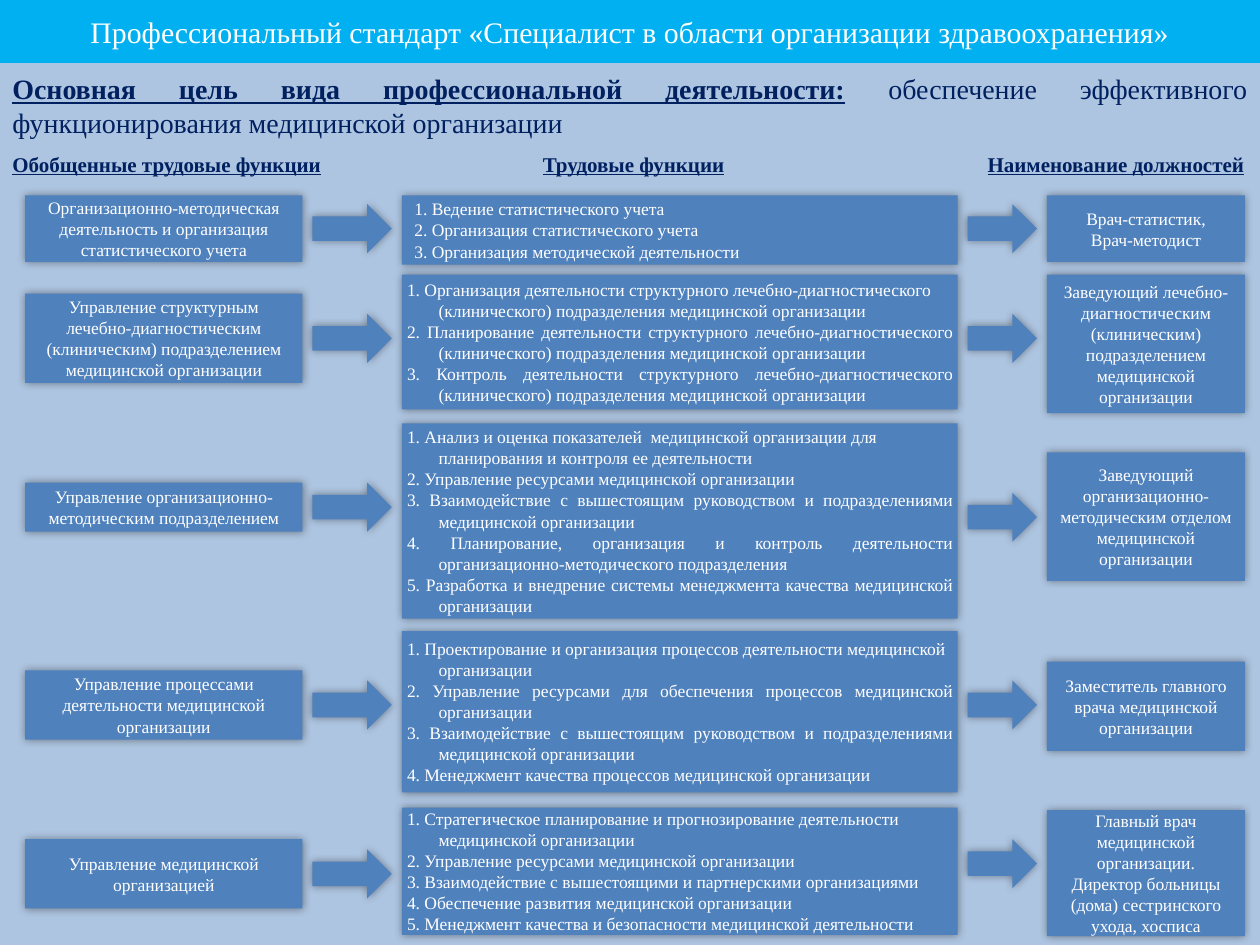
from dataclasses import dataclass

from lxml import etree
from pptx import Presentation
from pptx.dml.color import RGBColor
from pptx.enum.shapes import MSO_SHAPE as Shape
from pptx.enum.text import MSO_ANCHOR as Anchor, MSO_AUTO_SIZE as AutoSize, PP_ALIGN as Align
from pptx.oxml.ns import qn
from pptx.util import Inches, Pt

FONT = "Times New Roman"
BLUE = RGBColor(0x4F, 0x81, 0xBD)
PALE_BLUE = RGBColor(0xAE, 0xC5, 0xE1)
SKY = RGBColor(0x00, 0xB0, 0xF0)
NAVY = RGBColor(0x00, 0x20, 0x60)
WHITE = RGBColor(0xFF, 0xFF, 0xFF)

# Columns: left edge and width
GENERAL, FIRST_ARROW, DUTIES, SECOND_ARROW, POSITION = (
    (0.2, 2.2), (2.48, 0.63), (3.19, 4.41), (7.68, 0.55), (8.31, 1.57))
ARROW_HEIGHT = 0.39


@dataclass
class Row:
    """Each span is the top and height of a card; arrows give their tops."""
    general: str
    general_span: tuple
    duties: list
    duties_span: tuple
    positions: list
    position_span: tuple
    arrow_tops: tuple
    justified: bool = True


ROWS = [
    Row("Организационно-методическая деятельность и организация статистического учета",
        (1.55, 0.53),
        ["Ведение статистического учета",
         "Организация статистического учета",
         "Организация методической деятельности"],
        (1.55, 0.55),
        ["Врач-статистик,", "Врач-методист"], (1.55, 0.53),
        (1.62, 1.62), justified=False),
    Row("Управление структурным лечебно-диагностическим (клиническим) подразделением "
        "медицинской организации",
        (2.33, 0.71),
        [f"{action} деятельности структурного лечебно-диагностического (клинического) "
         "подразделения медицинской организации"
         for action in ("Организация", "Планирование", "Контроль")],
        (2.18, 1.07),
        ["Заведующий лечебно-диагностическим (клиническим) подразделением "
         "медицинской организации"], (2.18, 1.1),
        (2.49, 2.49)),
    Row("Управление организационно-методическим подразделением",
        (3.83, 0.39),
        ["Анализ и оценка показателей  медицинской организации для планирования "
         "и контроля ее деятельности",
         "Управление ресурсами медицинской организации",
         "Взаимодействие с вышестоящим руководством и подразделениями "
         "медицинской организации",
         "Планирование, организация и контроль деятельности "
         "организационно-методического подразделения",
         "Разработка и внедрение системы менеджмента качества медицинской организации"],
        (3.36, 1.55),
        ["Заведующий организационно-методическим отделом медицинской организации"],
        (3.59, 1.02),
        (3.83, 3.91)),
    Row("Управление процессами деятельности медицинской организации",
        (5.32, 0.55),
        ["Проектирование и организация процессов деятельности медицинской организации",
         "Управление ресурсами для обеспечения процессов медицинской организации",
         "Взаимодействие с вышестоящим руководством и подразделениями "
         "медицинской организации",
         "Менеджмент качества процессов медицинской организации"],
        (5.01, 1.28),
        ["Заместитель главного врача медицинской организации"], (5.25, 0.71),
        (5.4, 5.4)),
    Row("Управление медицинской организацией",
        (6.66, 0.55),
        ["Стратегическое планирование и прогнозирование деятельности "
         "медицинской организации",
         "Управление ресурсами медицинской организации",
         "Взаимодействие с вышестоящими и партнерскими организациями",
         "Обеспечение развития медицинской организации",
         "Менеджмент качества и безопасности медицинской деятельности"],
        (6.41, 1.01),
        ["Главный врач медицинской организации.",
         "Директор больницы (дома) сестринского ухода, хосписа"], (6.43, 1),
        (6.74, 6.66)),
]

HEADINGS = [
    ("Обобщенные трудовые функции", 0, 2.68),
    ("Трудовые функции", 4.21, 1.66),
    ("Наименование должностей", 7.74, 2.26),
]


def set_font(font, size, color, strong=False):
    font.name, font.size = FONT, Pt(size)
    font.color.rgb = color
    font.bold = font.underline = strong


def add_soft_shadow(shape):
    shape.shadow.inherit = False
    effects = shape._element.spPr.find(qn("a:effectLst"))
    shadow = etree.SubElement(effects, qn("a:outerShdw"), blurRad=str(Pt(5)),
                              dist="0", dir="0", algn="ctr", rotWithShape="0")
    color = etree.SubElement(shadow, qn("a:srgbClr"), val="000000")
    etree.SubElement(color, qn("a:alpha"), val="40000")


def add_block(slide, kind, column, span):
    (left, width), (top, height) = column, span
    shape = slide.shapes.add_shape(
        kind, Inches(left), Inches(top), Inches(width), Inches(height))
    shape.fill.solid()
    shape.fill.fore_color.rgb = BLUE
    shape.line.fill.background()
    add_soft_shadow(shape)
    return shape


def add_card(slide, column, span, lines):
    """Blue card with centred lines."""
    frame = add_block(slide, Shape.RECTANGLE, column, span).text_frame
    frame.word_wrap = True
    frame.vertical_anchor = Anchor.MIDDLE
    frame.text = "\n".join(lines)
    for paragraph in frame.paragraphs:
        paragraph.alignment = Align.CENTER
        set_font(paragraph.font, 10, WHITE)
    return frame


def add_duties(slide, row):
    """Numbered list with a hanging indent."""
    lines = [f"{number}. {duty}" for number, duty in enumerate(row.duties, 1)]
    frame = add_card(slide, DUTIES, row.duties_span, lines)
    if row.justified:
        frame.margin_left = frame.margin_right = Inches(0.04)
        frame.margin_top = frame.margin_bottom = Inches(0.04)
    for index, paragraph in enumerate(frame.paragraphs):
        paragraph.alignment = Align.JUSTIFY if row.justified and index else Align.LEFT
        properties = paragraph._p.get_or_add_pPr()
        properties.set("marL", str(Inches(0.25)))
        properties.set("indent", str(Inches(-0.25)))


def add_row(slide, row):
    add_card(slide, GENERAL, row.general_span, [row.general])
    add_duties(slide, row)
    add_card(slide, POSITION, row.position_span, row.positions)
    for column, top in zip((FIRST_ARROW, SECOND_ARROW), row.arrow_tops):
        add_block(slide, Shape.RIGHT_ARROW, column, (top, ARROW_HEIGHT))


def add_title(slide, left, top, width, height):
    title = slide.shapes.title
    title.left, title.top = Inches(left), Inches(top)
    title.width, title.height = Inches(width), Inches(height)
    title.fill.solid()
    title.fill.fore_color.rgb = SKY
    frame = title.text_frame
    frame.text = "Профессиональный стандарт «Специалист в области организации здравоохранения»"
    frame.auto_size = AutoSize.NONE
    frame.vertical_anchor = Anchor.MIDDLE
    frame.paragraphs[0].alignment = Align.CENTER
    set_font(frame.paragraphs[0].font, 17, WHITE)


def add_text_frame(slide, left, top, width, height, wrap):
    box = slide.shapes.add_textbox(Inches(left), Inches(top), Inches(width), Inches(height))
    box.text_frame.word_wrap = wrap
    return box.text_frame


def add_goal(slide, left, top, width, height):
    paragraph = add_text_frame(slide, left, top, width, height, True).paragraphs[0]
    paragraph.alignment = Align.JUSTIFY
    for text, strong in (
            ("Основная цель вида профессиональной деятельности:", True),
            (" обеспечение эффективного функционирования медицинской организации", False)):
        run = paragraph.add_run()
        run.text = text
        set_font(run.font, 16, NAVY, strong)


def add_headings(slide, top, height):
    for text, left, width in HEADINGS:
        frame = add_text_frame(slide, left, top, width, height, False)
        frame.text = text
        set_font(frame.paragraphs[0].font, 12, NAVY, strong=True)


def main():
    presentation = Presentation()
    presentation.slide_width, presentation.slide_height = Inches(10), Inches(7.5)
    slide = presentation.slides.add_slide(presentation.slide_layouts.get_by_name("Title Only"))
    slide.background.fill.solid()
    slide.background.fill.fore_color.rgb = PALE_BLUE
    add_title(slide, 0, 0, 10, 0.5)
    add_goal(slide, 0, 0.52, 10, 0.64)
    add_headings(slide, 1.15, 0.3)
    for row in ROWS:
        add_row(slide, row)
    presentation.save("out.pptx")


if __name__ == "__main__":
    main()
